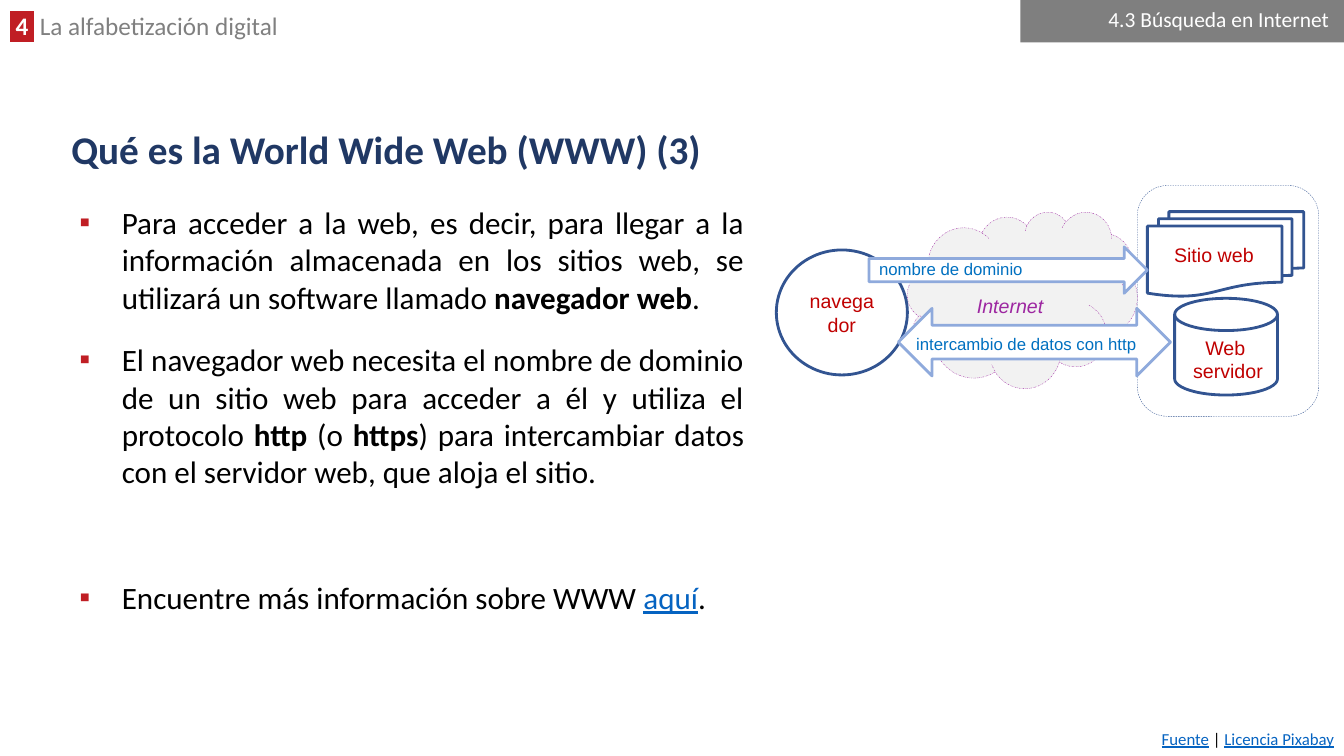
"""Build the slide on the World Wide Web, its browser and its servers."""
from lxml.etree import SubElement
from pptx import Presentation
from pptx.dml.color import RGBColor
from pptx.enum.dml import MSO_LINE as Dash
from pptx.enum.shapes import MSO_SHAPE as Kind
from pptx.enum.text import MSO_ANCHOR as Anchor, PP_ALIGN as Align
from pptx.oxml.ns import qn
from pptx.util import Inches, Pt

HUES = {
    "red": "C01E24", "label": "C00000", "white": "FFFFFF", "black": "000000",
    "gray": "808080", "bar": "7F7F7F", "title": "203864", "link": "0563C1",
    "navy": "325491", "arrow": "8FAADC", "blue": "0070C0",
    "purple": "9D27A1", "cloud": "F2F2F2",
}

HEAD = [(" 4 ", {"hue": "white", "bold": True, "mark": "red"}),
        (" La alfabetización digital", {"hue": "gray"})]
TITLE = [("Qué es la World Wide Web (WWW) (3)", {"hue": "title", "bold": True})]
TOPIC = [("4.3 Búsqueda en Internet ", {"hue": "white"})]
LINK = {"hue": "link", "line": True}
BOLD = {"bold": True}
BODY = [
    [("Para acceder a la web, es decir, para llegar a la información "
      "almacenada en los sitios web, se utilizará un software llamado ", {}),
     ("navegador web", BOLD), (". ", {})],
    [("El navegador web necesita el nombre de dominio de un sitio web para "
      "acceder a él y utiliza el protocolo ", {}),
     ("http ", BOLD), ("(o ", {}), ("https", BOLD),
     (") para intercambiar datos con el servidor web, que aloja el sitio.", {})],
    [("Encuentre más información sobre WWW ", {}), ("aquí", LINK), (".", {})],
]
GAPS = [0, 6, 51]
CREDIT = [("Fuente", LINK), (" | ", {}), ("Licencia Pixabay", LINK)]

BACK = [
    (Kind.ROUNDED_RECTANGLE, (11.28, 1.84, 1.8, 2.29), None, "navy", 0.25, Dash.DASH),
    (Kind.CLOUD, (9, 2.1, 2.28, 1.75), "cloud", "purple", 0.25, Dash.DASH_DOT),
]
FRONT = [
    (Kind.FLOWCHART_CONNECTOR, (7.7, 2.48, 1.3, 1.24), "white", "navy", 2, None),
    (Kind.LEFT_RIGHT_ARROW, (8.91, 3.06, 2.7, 0.67), "white", "arrow", 2, None),
    (Kind.FLOWCHART_MULTIDOCUMENT, (11.38, 2.1, 1.55, 0.84), "white", "navy", 2, None),
    (Kind.FLOWCHART_MAGNETIC_DISK, (11.65, 2.96, 1.02, 0.96), "white", "navy", 2, None),
    (Kind.RIGHT_ARROW, (8.62, 2.45, 2.76, 0.46), "white", "arrow", 2, None),
]
LABELS = [
    ((11.38, 2.36, 1.32, 0.34), ["Sitio web"], 14, "label", Align.CENTER),
    ((11.65, 3.28, 1.06, 0.57), ["Web ", "servidor"], 14, "label", Align.CENTER),
    ((8.62, 2.52, 1.74, 0.3), ["nombre de dominio"], 12, "blue", Align.LEFT),
    ((8.98, 3.26, 2.4, 0.3), ["intercambio de datos con http"], 12, "blue", Align.CENTER),
]


def color(name):
    return RGBColor.from_string(HUES[name])


def write(para, runs, size, face="Calibri", align=Align.LEFT, space=None):
    para.alignment = align
    if space:
        para.line_spacing = space
    for words, look in runs:
        run = para.add_run()
        run.text = words
        font = run.font
        font.name, font.size = face, Pt(size)
        font.bold = look.get("bold", False)
        font.italic = look.get("slant", False)
        font.underline = look.get("line", False)
        font.color.rgb = color(look.get("hue", "black"))
        if "mark" in look:
            props = run._r.get_or_add_rPr()
            mark = SubElement(props, qn("a:highlight"))
            SubElement(mark, qn("a:srgbClr"), val=HUES[look["mark"]])
            props.find(qn("a:solidFill")).addnext(mark)


def bullet(para):
    props = para._p.get_or_add_pPr()
    props.set("marL", str(Inches(0.5)))
    props.set("indent", str(Inches(-0.42)))
    tint = SubElement(props, qn("a:buClr"))
    SubElement(tint, qn("a:srgbClr"), val=HUES["red"])
    SubElement(props, qn("a:buFont"), typeface="Arial")
    SubElement(props, qn("a:buChar"), char="▪")


def box(slide, place, wrap=True):
    frame = slide.shapes.add_textbox(*map(Inches, place)).text_frame
    frame.word_wrap = wrap
    return frame


def draw(slide, kind, place, fill, edge, width=0, dash=None):
    shape = slide.shapes.add_shape(kind, *map(Inches, place))
    shape.shadow.inherit = False
    if fill:
        shape.fill.solid()
        shape.fill.fore_color.rgb = color(fill)
    else:
        shape.fill.background()
    if edge:
        shape.line.color.rgb = color(edge)
        shape.line.width = Pt(width)
        if dash:
            shape.line.dash_style = dash
    else:
        shape.line.fill.background()
    return shape


def main():
    deck = Presentation()
    deck.slide_width, deck.slide_height = Inches(13.33), Inches(7.5)
    slide = deck.slides.add_slide(deck.slide_layouts[6])

    write(box(slide, (0, 0.11, 5.71, 0.34)).paragraphs[0], HEAD, 18, space=0.8)
    for part in BACK:
        draw(slide, *part)

    frame = box(slide, (0.61, 1.18, 12.1, 0.66))
    frame.vertical_anchor = Anchor.MIDDLE
    write(frame.paragraphs[0], TITLE, 28, space=0.9)

    frame = box(slide, (0.61, 1.97, 6.87, 5.32))
    for i, (runs, gap) in enumerate(zip(BODY, GAPS)):
        para = frame.add_paragraph() if i else frame.paragraphs[0]
        bullet(para)
        para.space_before, para.space_after = Pt(gap), Pt(12)
        write(para, runs, 22.2, align=Align.JUSTIFY)

    write(box(slide, (3.74, 7.18, 9.59, 0.3)).paragraphs[0], CREDIT, 12,
          align=Align.RIGHT)

    node = [draw(slide, *part) for part in FRONT][0].text_frame
    node.word_wrap = True
    node.vertical_anchor = Anchor.MIDDLE
    write(node.paragraphs[0], [("navegador", {"hue": "label"})], 14, "Arial",
          Align.CENTER)

    for place, lines, size, hue, align in LABELS:
        frame = box(slide, place)
        for i, words in enumerate(lines):
            para = frame.add_paragraph() if i else frame.paragraphs[0]
            write(para, [(words, {"hue": hue})], size, "Arial", align)
    net = box(slide, (9.59, 2.87, 0.86, 0.34), wrap=False)
    write(net.paragraphs[0], [("Internet", {"hue": "purple", "slant": True})],
          14, "Arial")

    bar = draw(slide, Kind.RECTANGLE, (10.12, 0, 3.21, 0.42), "bar", None)
    bar.text_frame.word_wrap = True
    bar.text_frame.vertical_anchor = Anchor.MIDDLE
    write(bar.text_frame.paragraphs[0], TOPIC, 15.3, align=Align.RIGHT, space=0.8)
    deck.save("out.pptx")


if __name__ == "__main__":
    main()
